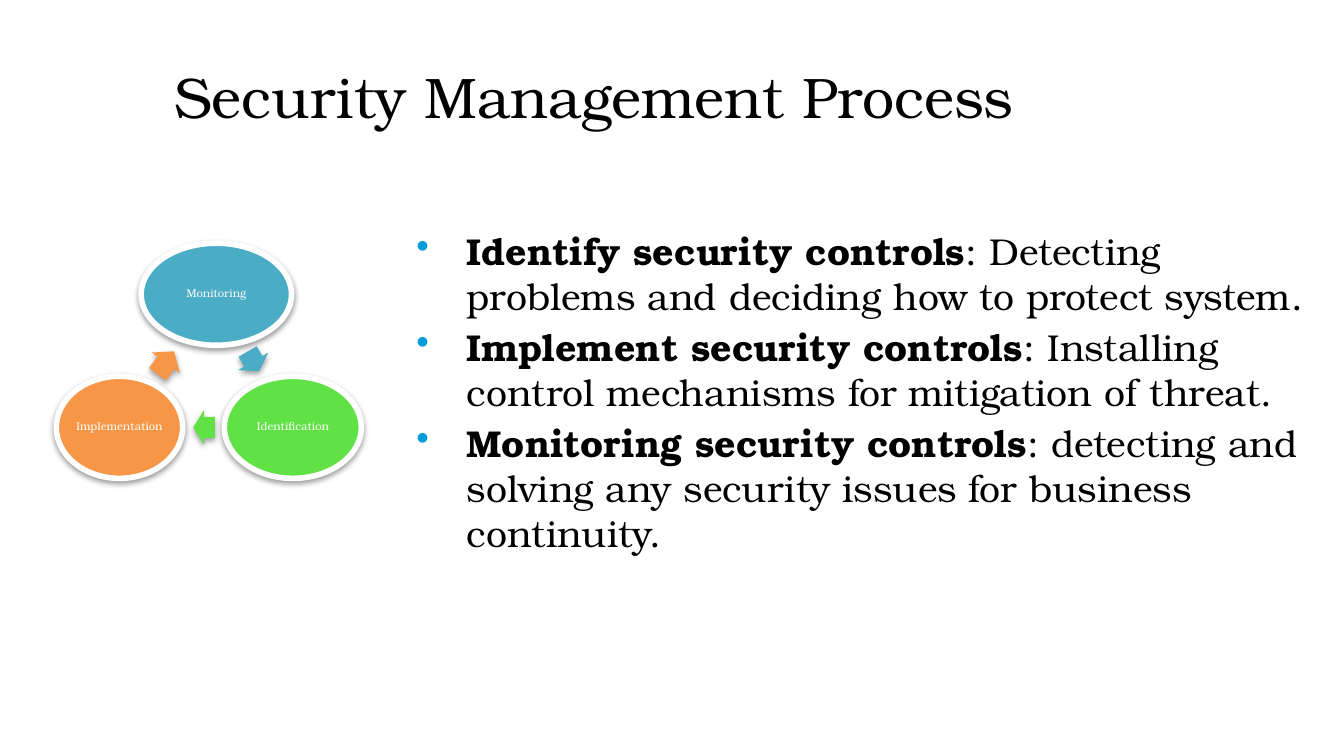
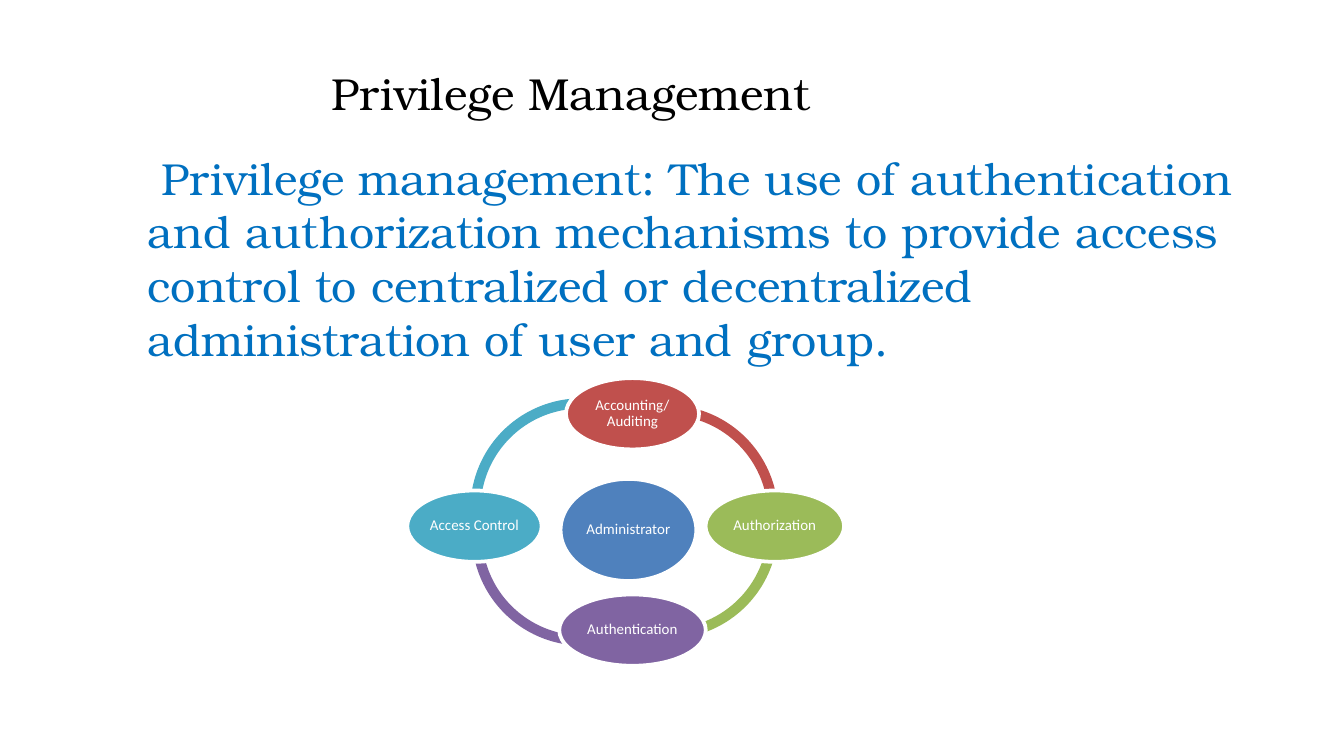
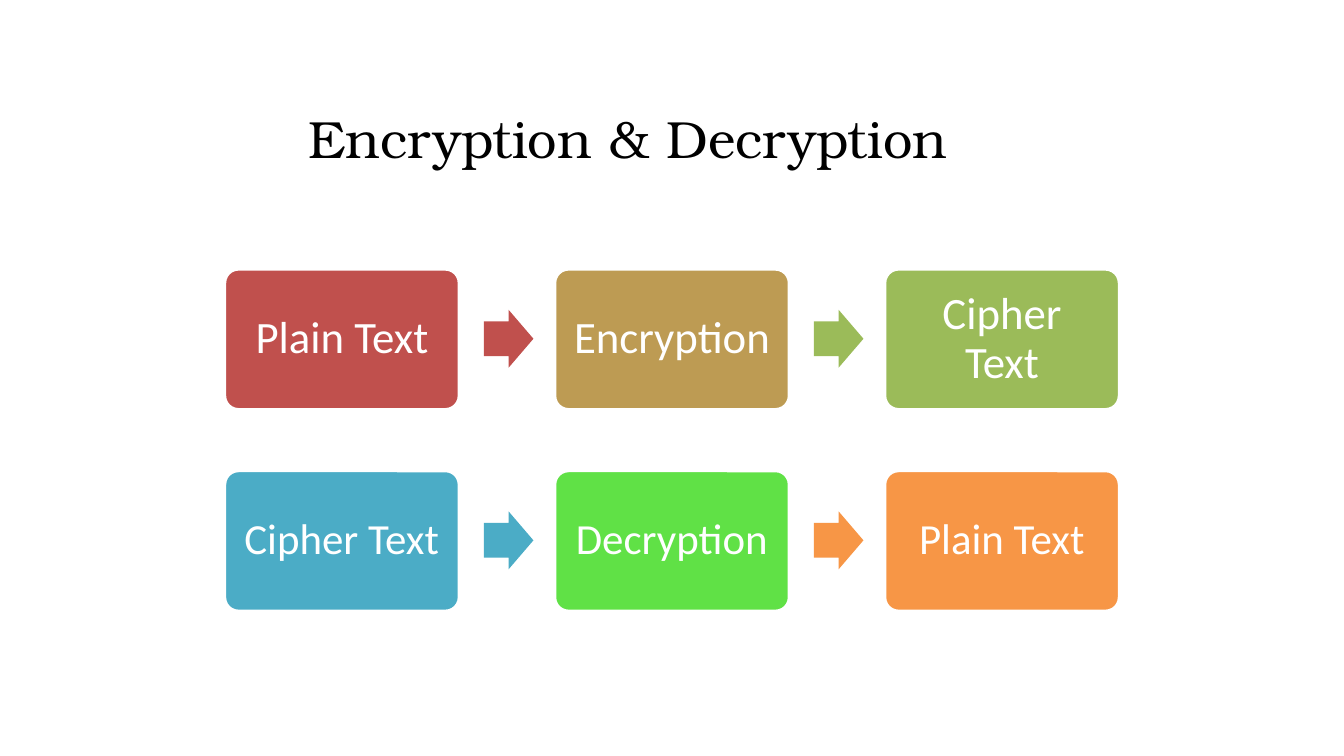
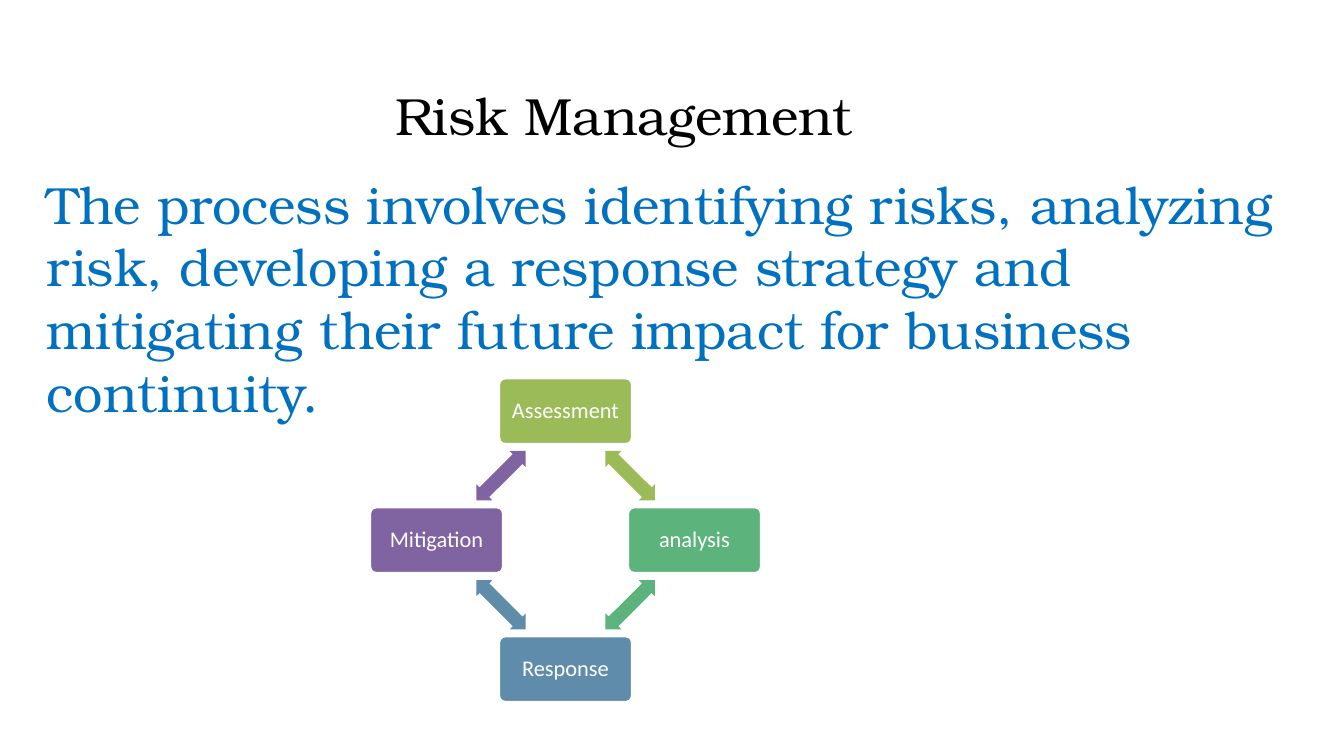
"""Build four slides on security, privilege, encryption and risk management."""
import math

import lxml.etree
import pptx
import pptx.dml.color
import pptx.enum.shapes
import pptx.enum.text
import pptx.oxml.ns
import pptx.util

Pt = pptx.util.Pt
RGBColor = pptx.dml.color.RGBColor
SHAPE = pptx.enum.shapes.MSO_SHAPE
ALIGN = pptx.enum.text.PP_ALIGN
ANCHOR = pptx.enum.text.MSO_ANCHOR
qn = pptx.oxml.ns.qn

BLACK = RGBColor(0x00, 0x00, 0x00)
WHITE = RGBColor(0xFF, 0xFF, 0xFF)
BODY_BLUE = RGBColor(0x00, 0x70, 0xC0)
BLUE = RGBColor(0x4F, 0x81, 0xBD)
TEAL = RGBColor(0x4B, 0xAC, 0xC6)
LIME = RGBColor(0x60, 0xE1, 0x46)
ORANGE = RGBColor(0xF7, 0x96, 0x46)
RED = RGBColor(0xC0, 0x50, 0x4D)
GREEN = RGBColor(0x9B, 0xBB, 0x59)
PURPLE = RGBColor(0x80, 0x64, 0xA2)
GOLD = RGBColor(0xBD, 0x9B, 0x53)
JADE = RGBColor(0x5C, 0xB3, 0x7C)
STEEL = RGBColor(0x60, 0x8C, 0xAB)
BULLET = "009DDC"

SERIF = "TeX Gyre Bonum"
SANS = "Calibri"


def format_runs(p, font, size, color):
    """Give every run of a paragraph the same font, size and colour."""
    for r in p.runs:
        r.font.name = font
        r.font.size = Pt(size)
        r.font.color.rgb = color


def add_text(s, box, text, size, color):
    """Add a wrapping serif text box."""
    tf = s.shapes.add_textbox(*map(Pt, box)).text_frame
    tf.word_wrap = True
    tf.text = text
    format_runs(tf.paragraphs[0], SERIF, size, color)
    return tf


def add_title(s, box, text, size):
    """Add a centred slide title."""
    tf = add_text(s, box, text, size, BLACK)
    tf.vertical_anchor = ANCHOR.MIDDLE
    tf.paragraphs[0].alignment = ALIGN.CENTER
    return tf


def add_body(s, box, text, size):
    """Add the blue explanatory paragraph."""
    tf = add_text(s, box, text, size, BODY_BLUE)
    tf.paragraphs[0].space_before = Pt(round(size * 0.17, 1))


def add_bullets(s, box, items):
    """Add bulleted paragraphs, each a bold term followed by its meaning."""
    tf = add_text(s, box, "", 20, BLACK)
    for i, (term, meaning) in enumerate(items):
        p = tf.paragraphs[0] if i == 0 else tf.add_paragraph()
        p.text = term
        p.add_run().text = meaning
        format_runs(p, SERIF, 20, BLACK)
        p.runs[0].font.bold = True
        p.space_before = Pt(3.4)
        pPr = p._p.get_or_add_pPr()
        pPr.set("marL", str(Pt(27)))
        pPr.set("indent", str(-Pt(27)))
        clr = lxml.etree.SubElement(pPr, qn("a:buClr"))
        lxml.etree.SubElement(clr, qn("a:srgbClr"), val=BULLET)
        lxml.etree.SubElement(pPr, qn("a:buChar"), char="•")


def add_part(s, kind, box, fill, adj=(), rotation=0, line=0):
    """Add a flat filled shape, with a white outline when line is given."""
    sp = s.shapes.add_shape(kind, *map(Pt, box))
    sp.shadow.inherit = False
    sp.fill.solid()
    sp.fill.fore_color.rgb = fill
    if line:
        sp.line.color.rgb = WHITE
        sp.line.width = Pt(line)
    else:
        sp.line.fill.background()
    for i, value in enumerate(adj):
        sp.adjustments[i] = value
    sp.rotation = rotation
    return sp


def add_label(sp, text, font, size, margin=0):
    """Write a centred white label inside a shape."""
    tf = sp.text_frame
    tf.word_wrap = True
    tf.vertical_anchor = ANCHOR.MIDDLE
    tf.margin_left = tf.margin_right = tf.margin_top = tf.margin_bottom = Pt(margin)
    tf.text = text
    p = tf.paragraphs[0]
    p.alignment = ALIGN.CENTER
    p.line_spacing = 0.9
    format_runs(p, font, size, WHITE)


def add_shadow(sp):
    """Give a shape a soft shadow falling downwards."""
    effects = sp._element.spPr.find(qn("a:effectLst"))
    shadow = lxml.etree.SubElement(effects, qn("a:outerShdw"), blurRad=str(Pt(3.1)),
                                   dist=str(Pt(1.6)), dir="5400000", rotWithShape="0")
    clr = lxml.etree.SubElement(shadow, qn("a:srgbClr"), val="000000")
    lxml.etree.SubElement(clr, qn("a:alpha"), val="38000")


def process_cycle(s, left, top):
    """Draw three shadowed ellipses with an arrow from each to the next."""
    stages = [
        ("Monitoring", TEAL, (45.4, 0, 80.6), (99.4, 54, 12.2), 60),
        ("Identification", LIME, (90, 71.3, 73.4), (73.4, 89.3, 11.5), 180),
        ("Implementation", ORANGE, (0, 71.3, 67.7), (51.1, 54.7, 15.1), 306),
    ]
    for text, color, (x, y, w), (ax, ay, aw), rotation in stages:
        node = add_part(s, SHAPE.OVAL, (left + x, top + y, w, 54.7), color, line=3)
        add_label(node, text, SERIF, 6)
        arrow = add_part(s, SHAPE.RIGHT_ARROW, (left + ax, top + ay, aw, 18.7), color,
                         (0.6, 0.5), rotation)
        add_shadow(node)
        add_shadow(arrow)


def privilege_ring(s, left, top):
    """Draw a ring of arcs through four ellipses around a central one."""
    arcs = [
        (33.8, 10.8, 171.2, 298, TEAL),
        (34.6, 24.5, 62.58, 184.38, PURPLE),
        (79.9, 20.9, 359, 108.83, GREEN),
        (79.9, 14.4, 250.93, 5.22, RED),
    ]
    for x, y, start, end, color in arcs:
        add_part(s, SHAPE.BLOCK_ARC, (left + x, top + y, 118.8, 118.8), color,
                 (start * 0.6, end * 0.6, 0.046))
    nodes = [
        ("Administrator", BLUE, 82.1, 54, 72.7, 54.7),
        ("Accounting/ Auditing", RED, 85, 0, 71.3, 38.2),
        ("Authorization", GREEN, 159.8, 60.2, 74.2, 38.2),
        ("Authentication", PURPLE, 81.4, 115.9, 78.5, 38.2),
        ("Access Control", TEAL, 0, 60.2, 72, 38.2),
    ]
    for text, color, x, y, w, h in nodes:
        node = add_part(s, SHAPE.OVAL, (left + x, top + y, w, h), color, line=2)
        add_label(node, text, SANS, 8)


def cipher_row(s, left, top, steps, arrow_colors, size):
    """Draw a row of three steps joined by block arrows."""
    pitch = 176.8
    for i, (text, color) in enumerate(steps):
        box = (left + i * pitch, top, 126, 75.6)
        step = add_part(s, SHAPE.ROUNDED_RECTANGLE, box, color, (0.1,), line=2)
        add_label(step, text, SANS, size, 7.2)
    for i, color in enumerate(arrow_colors):
        add_part(s, SHAPE.RIGHT_ARROW, (left + 139 + i * pitch, top + 22, 26.6, 31),
                 color, (0.6, 0.5))


def risk_cycle(s, left, top):
    """Draw four boxes on a circle with double arrows between them."""
    stages = [("Assessment", GREEN), ("analysis", JADE),
              ("Response", STEEL), ("Mitigation", PURPLE)]
    cx, cy = left + 105, top + 87

    def around(degrees, radius, w, h):
        """Return the box of a part centred on the circle."""
        a = math.radians(degrees)
        return cx + radius * math.cos(a) - w / 2, cy + radius * math.sin(a) - h / 2, w, h

    for i, (text, color) in enumerate(stages):
        turn = 90 * i
        node = add_part(s, SHAPE.ROUNDED_RECTANGLE, around(turn - 90, 69.1, 72, 36), color,
                        (0.1,), line=2)
        add_label(node, text, SANS, 12, 3.6)
        add_part(s, SHAPE.LEFT_RIGHT_ARROW, around(turn - 45, 48.9, 37.4, 12.2), color,
                 (0.6, 0.5), turn + 45)


def security_slide(s):
    """Build the security management process slide."""
    tf = add_title(s, (72, 40.3, 492, 54), "Security Management Process", 30.6)
    tf.margin_bottom = Pt(36)
    add_bullets(s, (216, 118.8, 504, 226.8), [
        ("Identify security controls", ": Detecting problems and deciding how to protect system."),
        ("Implement security controls",
         ": Installing control mechanisms for mitigation of threat."),
        ("Monitoring security controls",
         ": detecting and solving any security issues for business continuity."),
    ])
    process_cycle(s, 30.2, 130.3)


def privilege_slide(s):
    """Build the privilege management slide."""
    add_title(s, (72, 22.3, 468, 54), "Privilege Management", 24)
    add_body(s, (72, 77, 617.8, 70.6),
             " Privilege management: The use of authentication and authorization mechanisms to "
             "provide access control to centralized or decentralized administration of user and "
             "group.", 24)
    privilege_ring(s, 218.2, 202.6)


def encryption_slide(s):
    """Build the encryption and decryption slide."""
    add_title(s, (102.2, 46.8, 468, 54), "Encryption & Decryption", 28)
    cipher_row(s, 120.2, 144,
               [("Plain Text", RED), ("Encryption", GOLD), ("Cipher Text", GREEN)],
               [RED, GREEN], 24)
    cipher_row(s, 120.2, 252,
               [("Cipher Text", TEAL), ("Decryption", LIME), ("Plain Text", ORANGE)],
               [TEAL, ORANGE], 23)


def risk_slide(s):
    """Build the risk management slide."""
    add_title(s, (95.8, 34.6, 468, 54), " Risk Management", 28)
    add_body(s, (18, 88.6, 681.1, 59.8),
             "The process involves identifying risks, analyzing risk, developing a response "
             "strategy and mitigating their future impact for business continuity.", 28)
    risk_cycle(s, 198, 202.4)


def main():
    """Build the presentation and save it."""
    prs = pptx.Presentation()
    prs.slide_width = Pt(720)
    prs.slide_height = Pt(405)
    for build in (security_slide, privilege_slide, encryption_slide, risk_slide):
        build(prs.slides.add_slide(prs.slide_layouts[6]))
    prs.save("out.pptx")


if __name__ == "__main__":
    main()
